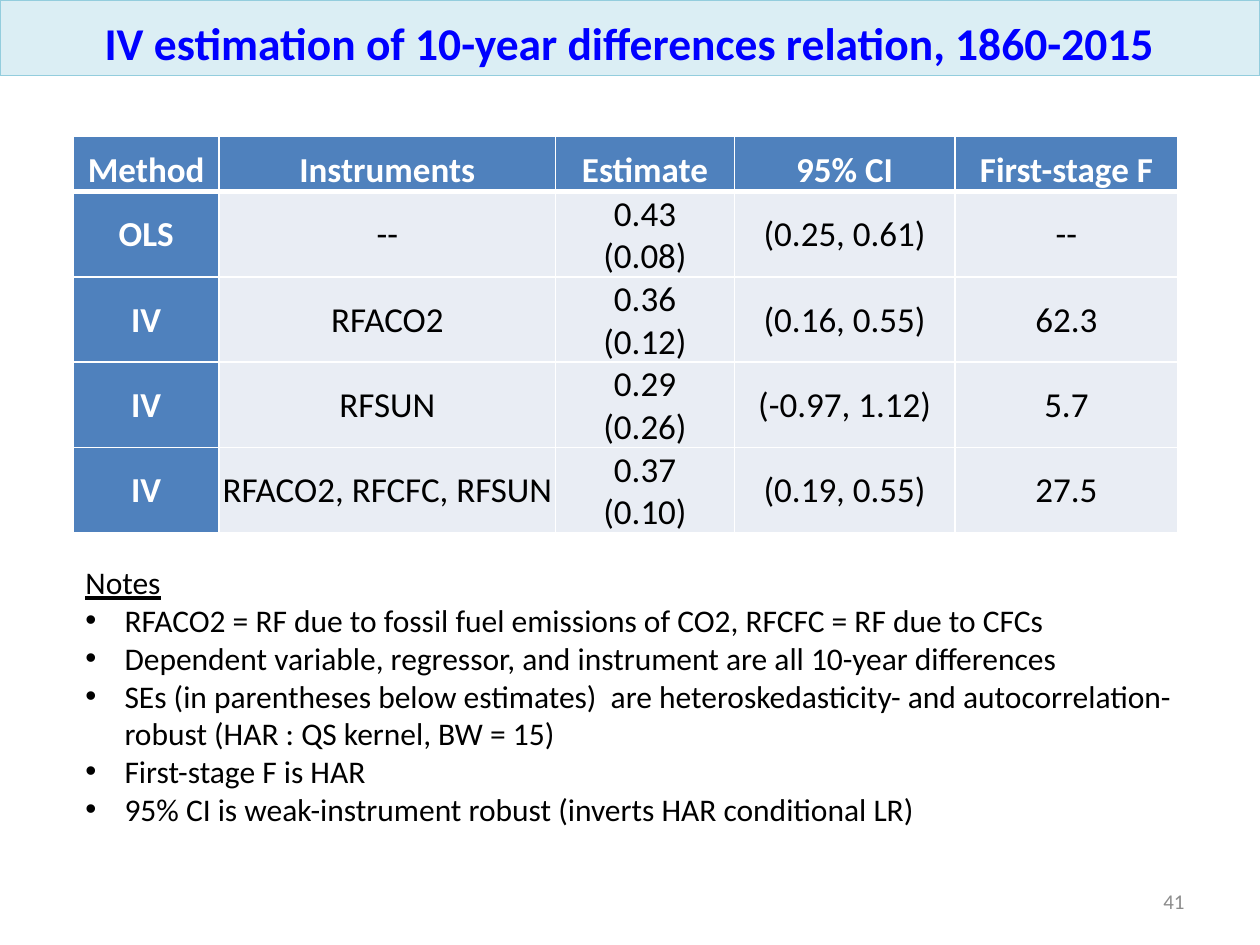
from lxml.etree import SubElement as Sub
from pptx import Presentation
from pptx.dml.color import RGBColor as RGB
from pptx.enum.text import MSO_ANCHOR as Anchor, MSO_AUTO_SIZE as Fit, PP_ALIGN as Align
from pptx.oxml.ns import qn
from pptx.util import Inches, Pt

HUES = {
    "band": "DBEEF4", "edge": "93CDDD", "title": "0000FF", "head": "4F81BD",
    "cell": "E9EDF4", "white": "FFFFFF", "black": "000000", "gray": "8C8C8C",
}
WIDTHS = [1.16, 2.67, 1.42, 1.75, 1.77]
HEAD_H, BODY_H = 0.44, 0.67
ROWS = [
    ["Method", "Instruments", "Estimate", "95% CI", "First-stage F"],
    ["OLS", "--", "0.43\n(0.08)", "(0.25, 0.61)", "--"],
    ["IV", "RFACO2", "0.36\n(0.12)", "(0.16, 0.55)", "62.3"],
    ["IV", "RFSUN", "0.29\n(0.26)", "(-0.97, 1.12)", "5.7"],
    ["IV", "RFACO2, RFCFC, RFSUN", "0.37\n(0.10)", "(0.19, 0.55)", "27.5"],
]
NOTES = [
    "RFACO2 = RF due to fossil fuel emissions of CO2, RFCFC = RF due to CFCs",
    "Dependent variable, regressor, and instrument are all 10-year differences",
    "SEs (in parentheses below estimates)  are heteroskedasticity- and "
    "autocorrelation-robust (HAR : QS kernel, BW = 15)",
    "First-stage F is HAR",
    "95% CI is weak-instrument robust (inverts HAR conditional LR)",
]


def color(key):
    return RGB.from_string(HUES[key])


def apply(item, values):
    for name, value in values.items():
        setattr(item, name, value)


def style(frame, size, hue, align, bold=False):
    for para in frame.paragraphs:
        para.alignment = align
        for run in para.runs:
            apply(run.font, {"name": "Calibri", "size": Pt(size), "bold": bold})
            run.font.color.rgb = color(hue)


def place(shape, box):
    apply(shape, dict(zip(("left", "top", "width", "height"), map(Inches, box))))


def add_title(slide, box):
    title = slide.shapes.title
    place(title, box)
    title.fill.solid()
    title.fill.fore_color.rgb = color("band")
    title.line.color.rgb = color("edge")
    title.line.width = Pt(0)
    frame = title.text_frame
    frame.text = "IV estimation of 10-year differences relation, 1860-2015"
    apply(frame, {"auto_size": Fit.NONE, "word_wrap": True,
                  "vertical_anchor": Anchor.BOTTOM})
    style(frame, 26, "title", Align.CENTER, True)


def border(cell, sides):
    """Draw white borders, given each side's width in points."""
    props = cell._tc.get_or_add_tcPr()
    for side in "LRTB":
        line = Sub(props, qn(f"a:ln{side}"), w=str(Pt(sides[side])))
        fill = Sub(line, qn("a:solidFill"))
        Sub(fill, qn("a:srgbClr"), val=HUES["white"])


def add_results(slide, left, top):
    height = HEAD_H + BODY_H * (len(ROWS) - 1)
    box = map(Inches, (left, top, sum(WIDTHS), height))
    table = slide.shapes.add_table(len(ROWS), len(WIDTHS), *box).table
    table.horz_banding = False
    for col, width in zip(table.columns, WIDTHS):
        col.width = Inches(width)
    for r, texts in enumerate(ROWS):
        table.rows[r].height = Inches(BODY_H if r else HEAD_H)
        for c, text in enumerate(texts):
            cell = table.cell(r, c)
            head = r == 0 or c == 0
            cell.text = text
            apply(cell, {
                "vertical_anchor": Anchor.MIDDLE if r else Anchor.BOTTOM,
                "margin_left": Inches(0.01), "margin_right": Inches(0.01),
                "margin_top": Inches(0.01), "margin_bottom": 0,
            })
            border(cell, {"L": 1, "R": 1, "T": 3 if r == 1 else 1, "B": 1 if r else 3})
            cell.fill.solid()
            cell.fill.fore_color.rgb = color("head" if head else "cell")
            style(cell.text_frame, 20, "white" if head else "black", Align.CENTER, head)


def add_text(slide, box, text):
    frame = slide.shapes.add_textbox(*map(Inches, box)).text_frame
    frame.text = text
    frame.word_wrap = True
    return frame


def bullet(para):
    props = para._p.get_or_add_pPr()
    indent = Inches(0.31)
    props.set("marL", str(indent))
    props.set("indent", str(-indent))
    Sub(props, qn("a:buFont"), typeface="Arial")
    Sub(props, qn("a:buChar"), char="•")


def add_notes(slide, box):
    frame = add_text(slide, box, "\n".join(["Notes"] + NOTES))
    frame.auto_size = Fit.SHAPE_TO_FIT_TEXT
    style(frame, 18, "black", Align.LEFT)
    first, *rest = frame.paragraphs
    first.runs[0].font.underline = True
    for para in rest:
        bullet(para)


def add_number(slide, box):
    frame = add_text(slide, box, "41")
    frame.vertical_anchor = Anchor.MIDDLE
    style(frame, 12, "gray", Align.RIGHT)


def main():
    deck = Presentation()
    apply(deck, {"slide_width": Inches(10), "slide_height": Inches(7.5)})
    slide = deck.slides.add_slide(deck.slide_layouts.get_by_name("Title Only"))
    add_title(slide, (0, 0, 10, 0.6))
    add_number(slide, (8.92, 6.95, 0.58, 0.4))
    add_notes(slide, (0.58, 4.42, 8.85, 2.22))
    add_results(slide, 0.58, 1.08)
    deck.save("out.pptx")


if __name__ == "__main__":
    main()
